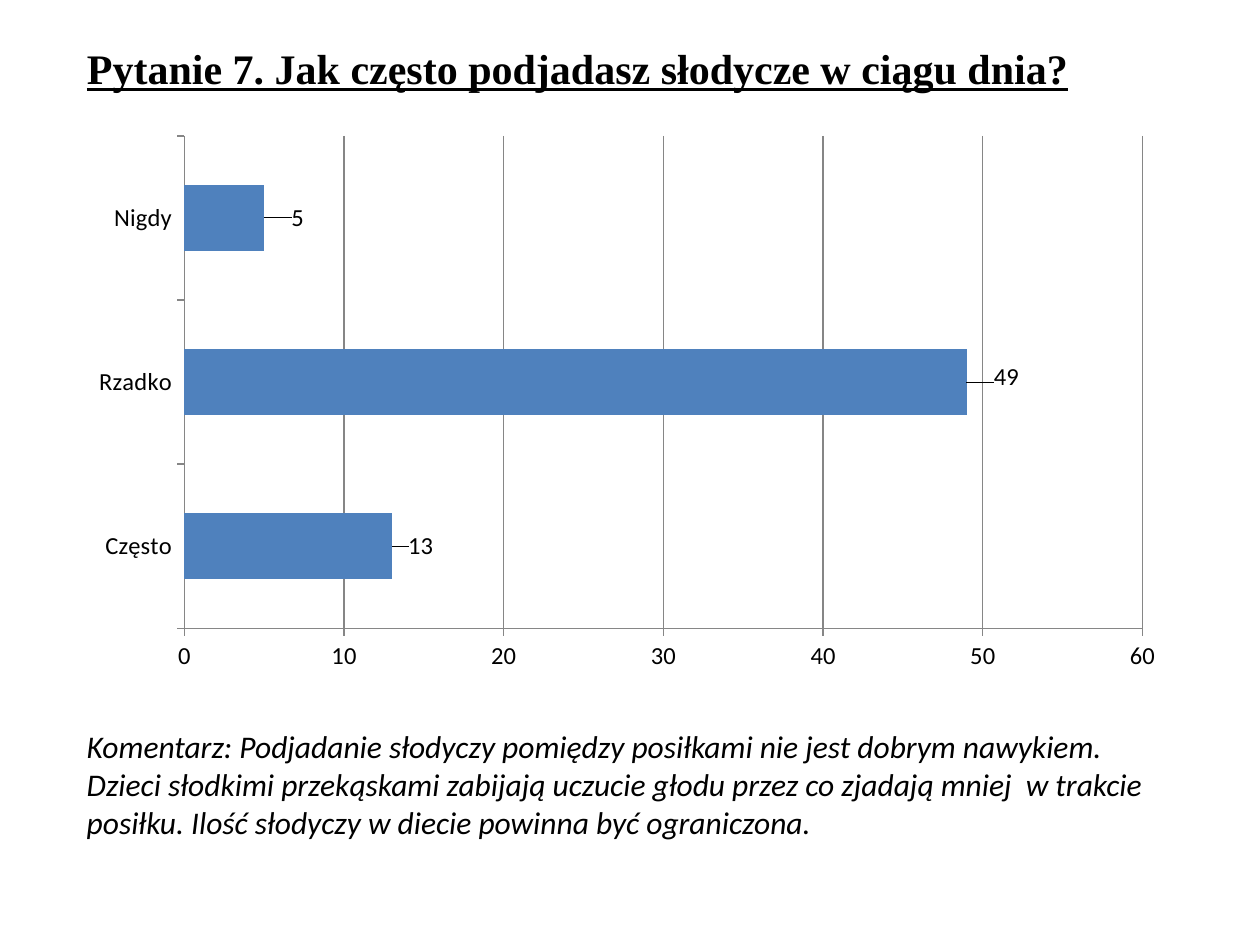
from pptx import Presentation
from pptx.chart.data import CategoryChartData
from pptx.dml.color import RGBColor
from pptx.enum import chart as ch, text
from pptx.oxml import parse_xml
from pptx.oxml.ns import nsdecls, qn
from pptx.util import Inches, Pt

TITLE = "Pytanie 7. Jak często podjadasz słodycze w ciągu dnia?"
COMMENT = (
    "Komentarz: Podjadanie słodyczy pomiędzy posiłkami nie jest dobrym nawykiem. "
    "Dzieci słodkimi przekąskami zabijają uczucie głodu przez co zjadają mniej  w trakcie "
    "posiłku. Ilość słodyczy w diecie powinna być ograniczona."
)
ANSWERS = {"Często": 13, "Rzadko": 49, "Nigdy": 5}
LABEL_SHIFTS = [(0.01, 0), (0.02, -0.01), (0.02, 0)]


def rgb(value):
    return RGBColor.from_string(value)


def style_font(font, name, size, bold=False, italic=False, underline=False):
    font.name, font.size = name, Pt(size)
    font.bold, font.italic, font.underline = bold, italic, underline
    font.color.rgb = rgb("000000")


def fill_text(sp, content, name, size, **style):
    tf = sp.text_frame
    tf.text = content
    tf.word_wrap = True
    tf.auto_size = text.MSO_AUTO_SIZE.SHAPE_TO_FIT_TEXT
    tf.vertical_anchor = text.MSO_ANCHOR.TOP
    p = tf.paragraphs[0]
    p.alignment = text.PP_ALIGN.LEFT
    style_font(p.runs[0].font, name, size, **style)


def add_title(s):
    sp = s.shapes.title
    sp.left, sp.top = Inches(0.59), Inches(0.29)
    sp.width, sp.height = Inches(8.9), Inches(0.5)
    fill_text(sp, TITLE, "Times New Roman", 24, bold=True, underline=True)


def add_comment(s):
    sp = s.shapes.add_textbox(Inches(0.59), Inches(5.72), Inches(8.9), Inches(1.01))
    fill_text(sp, COMMENT, "Calibri", 18, italic=True)


def manual_layout(**values):
    items = "".join(f'<c:{key} val="{value}"/>' for key, value in values.items())
    return parse_xml(
        f'<c:layout {nsdecls("c")}><c:manualLayout>{items}</c:manualLayout></c:layout>'
    )


def place_plot(chart):
    area = chart.element.find(".//" + qn("c:plotArea"))
    old = area.find(qn("c:layout"))
    if old is not None:
        area.remove(old)
    area.insert(0, manual_layout(
        layoutTarget="inner", xMode="edge", yMode="edge", x=0.1, y=0.02, w=0.87, h=0.88
    ))


def style_axis(axis):
    axis.major_tick_mark = ch.XL_TICK_MARK.OUTSIDE
    axis.minor_tick_mark = ch.XL_TICK_MARK.NONE
    style_line(axis.format.line)


def style_line(line):
    line.color.rgb = rgb("868686")
    line.width = Pt(0.75)


def add_labels(chart, series):
    labels = series.data_labels
    labels.show_value = True
    labels.position = ch.XL_LABEL_POSITION.OUTSIDE_END
    for i in range(len(LABEL_SHIFTS)):
        series.points[i].data_label.position = ch.XL_LABEL_POSITION.OUTSIDE_END
    for label, (x, y) in zip(chart.element.iter(qn("c:dLbl")), LABEL_SHIFTS):
        label.find(qn("c:idx")).addnext(manual_layout(x=x, y=y))


def add_answer_chart(s):
    data = CategoryChartData()
    data.categories = list(ANSWERS)
    data.add_series("Series 1", list(ANSWERS.values()))
    chart = s.shapes.add_chart(
        ch.XL_CHART_TYPE.BAR_CLUSTERED,
        Inches(0.59), Inches(0.99), Inches(8.74), Inches(4.44), data,
    ).chart
    chart.has_legend = False
    chart.has_title = False
    style_font(chart.font, "Calibri", 14)
    place_plot(chart)

    plot = chart.plots[0]
    plot.gap_width = 150
    plot.vary_by_categories = False
    series = plot.series[0]
    series.format.fill.solid()
    series.format.fill.fore_color.rgb = rgb("4F81BD")
    add_labels(chart, series)

    axis = chart.value_axis
    axis.minimum_scale, axis.maximum_scale, axis.major_unit = 0, 60, 10
    axis.has_major_gridlines = True
    style_line(axis.major_gridlines.format.line)
    style_axis(axis)
    style_axis(chart.category_axis)


def main():
    prs = Presentation()
    prs.slide_width, prs.slide_height = Inches(10), Inches(7.5)
    s = prs.slides.add_slide(prs.slide_layouts[5])
    add_title(s)
    add_answer_chart(s)
    add_comment(s)
    prs.save("out.pptx")


if __name__ == "__main__":
    main()
